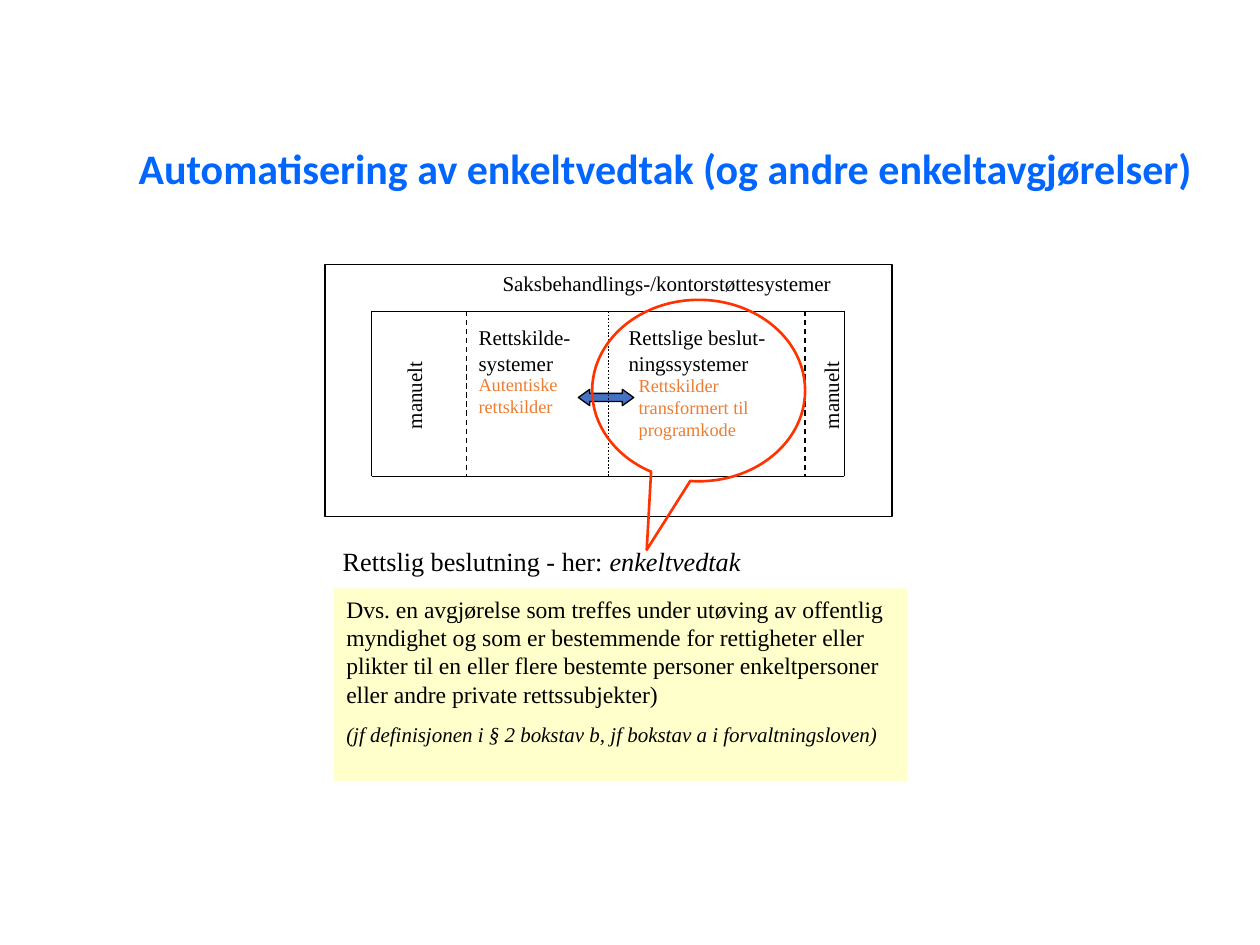
from pptx import Presentation
from pptx.dml.color import RGBColor
from pptx.enum.dml import MSO_LINE_DASH_STYLE as Dash
from pptx.enum.shapes import MSO_CONNECTOR_TYPE as Connector, MSO_SHAPE as Shape
from pptx.enum.text import MSO_ANCHOR as Anchor, MSO_AUTO_SIZE as AutoSize, PP_ALIGN as Align
from pptx.oxml.ns import qn
from pptx.util import Inches, Pt

BLACK, ORANGE = "000000", "ED7D31"


def color(value):
    """Turn a hex string into a colour."""
    return RGBColor.from_string(value)


def apply(target, **values):
    """Set each named attribute on the target."""
    for name, value in values.items():
        setattr(target, name, value)


class SlideBuilder:
    """Hold the text style and the current slide."""

    font = "Times New Roman"

    def __init__(self, slide):
        """Keep the slide to draw on."""
        self.slide = slide

    def run(self, paragraph, text, size, fill=BLACK, **values):
        """Add a formatted run to a paragraph."""
        run = paragraph.add_run()
        run.text = text
        apply(run.font, **{"name": self.font, "size": Pt(size), **values})
        run.font.color.rgb = color(fill)

    def title(self, text, box):
        """Place and format the title."""
        title = self.slide.shapes.title
        apply(title, **dict(zip(("left", "top", "width", "height"), map(Inches, box))))
        apply(title.text_frame, word_wrap=True, vertical_anchor=Anchor.MIDDLE,
              auto_size=AutoSize.NONE)
        paragraph = title.text_frame.paragraphs[0]
        apply(paragraph, alignment=Align.LEFT, line_spacing=0.9)
        self.run(paragraph, text, 24, "0066FF", name="Calibri", bold=True)

    def text(self, lines, box, size=12, fill=BLACK, rotation=0):
        """Add a text box with one paragraph for each line."""
        shape = self.slide.shapes.add_textbox(*map(Inches, box))
        shape.rotation = rotation
        frame = shape.text_frame
        frame.word_wrap = False
        for index, line in enumerate(lines):
            paragraph = frame.add_paragraph() if index else frame.paragraphs[0]
            paragraph.alignment = Align.LEFT
            if line:
                self.run(paragraph, line, size, fill)
        return frame

    def shape(self, kind, box, fill=None, line=None, width=0.75, adjustments=()):
        """Add a preset shape with optional fill and line."""
        shape = self.slide.shapes.add_shape(kind, *map(Inches, box))
        shape.shadow.inherit = False
        for index, value in enumerate(adjustments):
            shape.adjustments[index] = value
        for target, value in ((shape.fill, fill), (shape.line.fill, line)):
            if value:
                target.solid()
                target.fore_color.rgb = color(value)
            else:
                target.background()
        if line:
            shape.line.width = Pt(width)
        return shape

    def line(self, start, end, dash=None, width=0.75):
        """Add a straight black line."""
        line = self.slide.shapes.add_connector(
            Connector.STRAIGHT, *map(Inches, (*start, *end)))
        apply(line.line, width=Pt(width), dash_style=dash)
        line.line.color.rgb = color(BLACK)
        properties = line._element.spPr
        properties.append(properties.makeelement(qn("a:effectLst"), {}))


def add_system_diagram(builder):
    """Draw the case handling frame with its four fields."""
    builder.shape(Shape.RECTANGLE, (2.58, 2.1, 4.5, 2), line=BLACK)
    builder.text(["Saksbehandlings-/kontorstøttesystemer"], (3.89, 2.1, 2.84, 0.3))
    builder.text(["Autentiske", "rettskilder"], (3.7, 2.91, 0.84, 0.45), 10.5, ORANGE)
    builder.text(["Rettskilder", "transformert til", "programkode"],
                 (4.97, 2.92, 1.09, 0.63), 10.5, ORANGE)
    builder.shape(Shape.LEFT_RIGHT_ARROW, (4.59, 3.09, 0.44, 0.13), "4472C4", BLACK,
                  adjustments=(0.5, 0.7))

    left, middle, right, top, bottom = 2.95, 4.83, 6.7, 2.47, 3.78
    for outer in (left, right):
        builder.line((outer, bottom), (outer, top))
        for level in (top, bottom):
            builder.line((outer, level), (middle, level))
    for x, dash, width in ((3.7, Dash.DASH, 0.75), (middle, Dash.ROUND_DOT, 1),
                           (6.39, Dash.DASH, 0.75)):
        builder.line((x, top), (x, bottom), dash, width)

    builder.text(["Rettskilde-", "systemer"], (3.7, 2.53, 0.94, 0.51))
    builder.text(["Rettslige beslut-", "ningssystemer"], (4.89, 2.53, 1.3, 0.51))
    for x in (2.91, 6.22):
        builder.text(["manuelt"], (x, 2.98, 0.75, 0.3), rotation=270)


def add_decision(builder):
    """Draw the callout and the definition of the decision."""
    builder.shape(Shape.OVAL_CALLOUT, (4.7, 2.38, 1.69, 1.44), line="FF3300", width=1.5,
                  adjustments=(-0.244, 0.878))
    definition = builder.shape(Shape.RECTANGLE, (2.65, 4.67, 4.55, 1.53), "FFFFCC")
    frame = definition.text_frame
    apply(frame, word_wrap=True, vertical_anchor=Anchor.TOP)
    paragraphs = frame.paragraphs[0], frame.add_paragraph()
    for paragraph in paragraphs:
        apply(paragraph, alignment=Align.LEFT, space_before=Pt(3.8), space_after=Pt(3.8))
    builder.run(paragraphs[0], "Dvs. en avgjørelse som treffes under utøving av offentlig "
                "myndighet og som er bestemmende for rettigheter eller plikter til en eller "
                "flere bestemte personer enkeltpersoner eller andre private rettssubjekter)",
                13.5)
    builder.run(paragraphs[1], "(jf definisjonen i § 2 bokstav b, jf bokstav a i "
                "forvaltningsloven)", 12, italic=True)
    heading = builder.text(["Rettslig beslutning - her: "], (2.52, 4.28, 3.48, 0.35), 15)
    apply(heading, word_wrap=True, margin_left=Inches(0.2))
    builder.run(heading.paragraphs[0], "enkeltvedtak", 15, italic=True)


def main():
    """Build and save the presentation."""
    presentation = Presentation()
    apply(presentation, slide_width=Inches(10), slide_height=Inches(7.5))
    slide = presentation.slides.add_slide(presentation.slide_layouts.get_by_name("Title Only"))
    builder = SlideBuilder(slide)
    builder.title("Automatisering av enkeltvedtak (og andre enkeltavgjørelser)",
                  (1, 0.95, 8.56, 0.81))
    add_system_diagram(builder)
    add_decision(builder)
    presentation.save("out.pptx")


if __name__ == "__main__":
    main()
